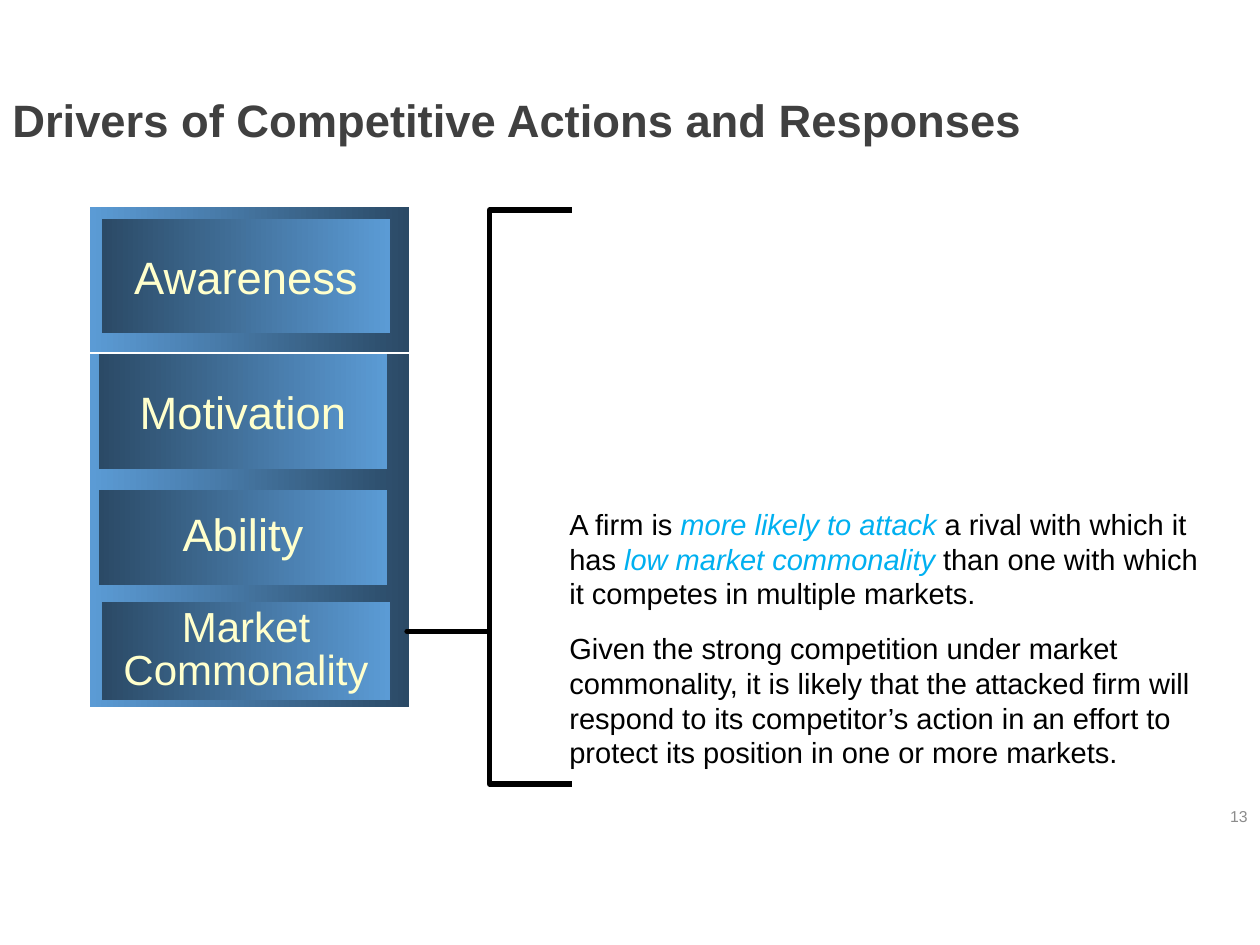
import pptx
import pptx.util
import pptx.dml.color
import pptx.enum.shapes
import pptx.enum.text

COLORS = {
    "title": "404040",
    "number": "8C8C8C",
    "light": "5B9BD5",
    "dark": "2B4A66",
    "driver": "FFFFCC",
    "body": "000000",
    "accent": "00B0F0",
}
ALIGN = pptx.enum.text.PP_ALIGN
ANCHOR = pptx.enum.text.MSO_ANCHOR
SHAPE = pptx.enum.shapes.MSO_SHAPE


def px(length):
    return round(length * 914400 / 126)


def rgb(name):
    return pptx.dml.color.RGBColor.from_string(COLORS[name])


def add_run(paragraph, text, size, color, bold=False, italic=False):
    run = paragraph.add_run()
    run.text = text
    run.font.name = "Arial"
    run.font.size = pptx.util.Pt(size)
    run.font.bold = bold
    run.font.italic = italic
    run.font.color.rgb = rgb(color)


def add_text_frame(slide, box, anchor):
    frame = slide.shapes.add_textbox(*map(px, box)).text_frame
    frame.word_wrap = True
    frame.vertical_anchor = anchor
    return frame


def add_title(slide, box):
    heading = add_text_frame(slide, box, ANCHOR.MIDDLE).paragraphs[0]
    heading.line_spacing = 0.9
    add_run(heading, "Drivers of Competitive Actions and Responses", 25.9, "title", bold=True)


def add_page_number(slide, box):
    number = add_text_frame(slide, box, ANCHOR.MIDDLE).paragraphs[0]
    number.alignment = ALIGN.RIGHT
    add_run(number, "13", 9, "number")


def add_gradient_panel(slide, box, start, end):
    panel = slide.shapes.add_shape(SHAPE.RECTANGLE, *map(px, box))
    panel.shadow.inherit = False
    panel.line.fill.background()
    panel.fill.gradient()
    panel.fill.gradient_angle = 0
    for stop, color in zip(panel.fill.gradient_stops, (start, end)):
        stop.color.rgb = rgb(color)
    return panel


def add_driver(slide, box, label, inset, face_height, size=25.9, spacing=None):
    left, top, width, height = box
    dx, dy = inset
    add_gradient_panel(slide, box, "light", "dark")
    face = add_gradient_panel(slide, (left + dx, top + dy, 288, face_height), "dark", "light")
    face.text_frame.word_wrap = True
    face.text_frame.vertical_anchor = ANCHOR.MIDDLE
    caption = face.text_frame.paragraphs[0]
    caption.alignment = ALIGN.CENTER
    caption.line_spacing = spacing
    add_run(caption, label, size, "driver")


def add_drivers(slide, box):
    left, top, width, height = box
    drivers = [
        (274, 127, "Ability", (9, 0), 104),
        (147, 136, "Motivation", (9, 0), 115),
        (0, 145, "Awareness", (12, 12), 114),
        (384, 116, "Market Commonality", (12, 11), 98, 24, 0.85),
    ]
    for offset, frame_height, *details in drivers:
        add_driver(slide, (left, top + offset, width, frame_height), *details)


def add_bracket(slide, box):
    bracket = slide.shapes.add_shape(SHAPE.LEFT_BRACE, *map(px, box))
    bracket.shadow.inherit = False
    bracket.adjustments[0] = 0
    bracket.adjustments[1] = 0.734
    bracket.fill.background()
    bracket.line.color.rgb = rgb("body")
    bracket.line.width = pptx.util.Pt(3)


def add_explanation(slide, box):
    statements = [
        (11.1, [
            ("A firm is ", False),
            ("more likely to attack ", True),
            ("a rival with which it has ", False),
            ("low market commonality ", True),
            ("than one with which it competes in multiple markets.", False),
        ]),
        (9.2, [
            ("Given the strong competition under market commonality, it is likely that "
             "the attacked firm will respond to its competitor’s action in an effort to "
             "protect its position in one or more markets.", False),
        ]),
    ]
    frame = add_text_frame(slide, box, ANCHOR.TOP)
    for index, (space_after, phrases) in enumerate(statements):
        statement = frame.add_paragraph() if index else frame.paragraphs[0]
        statement.space_after = pptx.util.Pt(space_after)
        for text, stressed in phrases:
            add_run(statement, text, 16.6, "accent" if stressed else "body", italic=stressed)


def main():
    deck = pptx.Presentation()
    deck.slide_width = px(1260)
    deck.slide_height = px(945)
    slide = deck.slides.add_slide(deck.slide_layouts[6])
    add_title(slide, (0, 89, 1071, 68))
    add_page_number(slide, (1198, 799, 62, 34))
    add_drivers(slide, (90, 207, 319, 500))
    add_bracket(slide, (407, 210, 165, 574))
    add_explanation(slide, (557, 500, 659, 278))
    deck.save("out.pptx")


if __name__ == "__main__":
    main()
